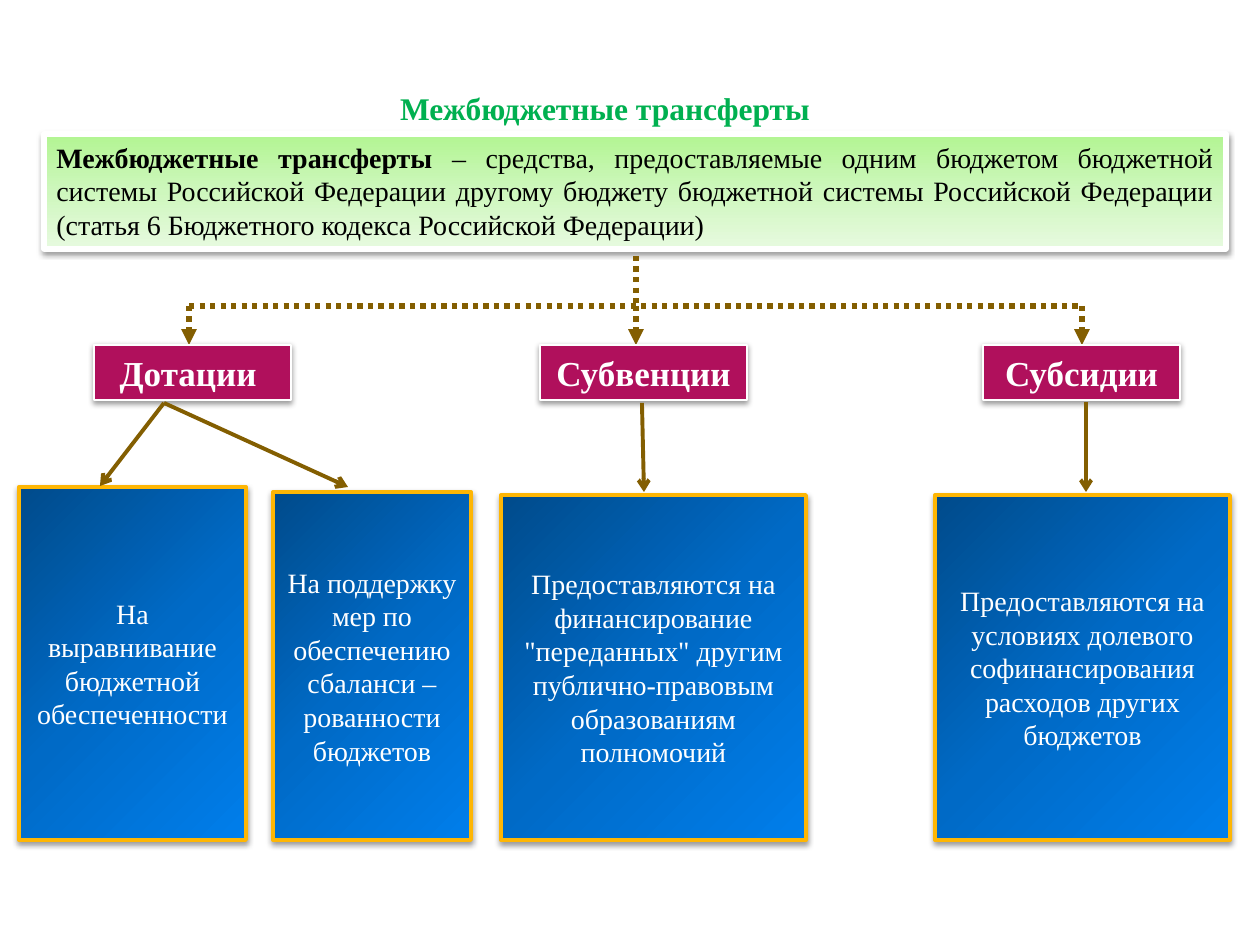
"""Builds a slide that explains the kinds of interbudgetary transfers."""
from copy import deepcopy

from lxml.etree import SubElement
from pptx import Presentation
from pptx.dml.color import RGBColor
from pptx.enum.dml import MSO_LINE
from pptx.enum.shapes import MSO_CONNECTOR, MSO_SHAPE
from pptx.enum.text import MSO_ANCHOR, PP_ALIGN
from pptx.oxml.ns import qn
from pptx.util import Emu, Pt

FONT = "Times New Roman"
BROWN = "835E01"
GREEN_STOPS = ("B2F592", "CEF7BD", "E7FADF")
BLUE_STOPS = ("004B8B", "006AC6", "007EEB")
CENTERS = (189, 636, 1082)
BUS_Y = 306
KIND_TOP = 345
BOTTOM = 840

KINDS = (
    (94, 197, "Дотации "),
    (540, 207, "Субвенции "),
    (983, 197, "Субсидии"),
)
DETAILS = (
    (19, 487, 227, "На выравнивание бюджетной обеспеченности"),
    (273, 492, 198, "На поддержку мер по обеспечению сбаланси –рованности бюджетов"),
    (501, 495, 305, 'Предоставляются на финансирование "переданных" другим '
                    "публично-правовым образованиям полномочий"),
    (935, 495, 295, "Предоставляются на условиях долевого софинансирования "
                    "расходов других бюджетов"),
)
ARROWS = (
    (164, 403, 100, 486),
    (164, 403, 348, 487),
    (642, 403, 644, 492),
    (1086, 402, 1086, 492),
)


def px(n):
    return Emu(round(n * 914400 / 126))


def rgb(value):
    return RGBColor.from_string(value)


def set_gradient(fill, parent, colors, angle):
    fill.gradient()
    fill.gradient_angle = 360 - angle
    stops = parent.find(".//" + qn("a:gsLst"))
    stops.insert(1, deepcopy(stops[0]))
    for stop, color, position in zip(fill.gradient_stops, colors, (0, 0.5, 1)):
        stop.color.rgb = rgb(color)
        stop.position = position


def add_shadow(sp):
    sp.shadow.inherit = False
    effects = sp._element.spPr.find(qn("a:effectLst"))
    shadow = SubElement(effects, qn("a:outerShdw"), blurRad="40000", dist="20000",
                        dir="5400000", rotWithShape="0")
    color = SubElement(shadow, qn("a:srgbClr"), val="000000")
    SubElement(color, qn("a:alpha"), val="38000")


def add_box(s, left, top, width, height, line, line_width):
    sp = s.shapes.add_shape(MSO_SHAPE.RECTANGLE, px(left), px(top), px(width), px(height))
    sp.line.color.rgb = rgb(line)
    sp.line.width = Pt(line_width)
    add_shadow(sp)
    return sp


def write(sp, runs, size, color, bold=False, align=PP_ALIGN.CENTER, anchor=MSO_ANCHOR.TOP):
    tf = sp.text_frame
    tf.word_wrap = True
    tf.vertical_anchor = anchor
    p = tf.paragraphs[0]
    p.alignment = align
    p.font.name = FONT
    p.font.size = Pt(size)
    p.font.color.rgb = rgb(color)
    p.font.bold = bold
    for text in runs:
        p.add_run().text = text
    return p


def add_line(s, x1, y1, x2, y2, width, arrow=None, dotted=False):
    line = s.shapes.add_connector(MSO_CONNECTOR.STRAIGHT, px(x1), px(y1), px(x2), px(y2))
    line.line.color.rgb = rgb(BROWN)
    line.line.width = Pt(width)
    if dotted:
        line.line.dash_style = MSO_LINE.ROUND_DOT
    if arrow:
        SubElement(line.line._get_or_add_ln(), qn("a:tailEnd"), type=arrow)
    SubElement(line._element.spPr, qn("a:effectLst"))


def add_title(s):
    sp = s.shapes.add_textbox(px(374), px(83), px(462), px(50))
    write(sp, ["Межбюджетные трансферты"], 18, "00B050", bold=True)


def add_definition(s):
    sp = add_box(s, 44, 134, 1182, 115, "FFFFFF", 3)
    set_gradient(sp.fill, sp._element.spPr, GREEN_STOPS, 90)
    p = write(sp, ["Межбюджетные трансферты ",
                   "– средства, предоставляемые одним бюджетом бюджетной системы "
                   "Российской Федерации другому бюджету бюджетной системы Российской "
                   "Федерации (статья 6 Бюджетного кодекса Российской Федерации)"],
              16, "000000", align=PP_ALIGN.JUSTIFY)
    p.runs[0].font.bold = True


def add_branches(s):
    left, middle, right = CENTERS
    add_line(s, left, BUS_Y, right, BUS_Y, 3, dotted=True)
    add_line(s, middle, 256, middle, BUS_Y, 3, dotted=True)
    for x in CENTERS:
        add_line(s, x, BUS_Y, x, KIND_TOP, 3, "triangle", dotted=True)


def add_kind(s, left, width, text):
    sp = add_box(s, left, KIND_TOP, width, 55, "FFFFFF", 1.5)
    sp.fill.solid()
    sp.fill.fore_color.rgb = rgb("B0105C")
    write(sp, [text], 20, "FFFFFF", bold=True)


def add_detail(s, left, top, width, text):
    sp = add_box(s, left, top, width, BOTTOM - top, "FEB604", 2.25)
    set_gradient(sp.fill, sp._element.spPr, BLUE_STOPS, 45)
    write(sp, [text], 16, "FFFFFF", anchor=MSO_ANCHOR.MIDDLE)


def main():
    prs = Presentation()
    prs.slide_width, prs.slide_height = px(1260), px(945)
    s = prs.slides.add_slide(prs.slide_layouts[6])
    add_title(s)
    add_definition(s)
    add_branches(s)
    for kind in KINDS:
        add_kind(s, *kind)
    for detail in DETAILS:
        add_detail(s, *detail)
    for arrow in ARROWS:
        add_line(s, *arrow, 2.25, "arrow")
    prs.save("out.pptx")


if __name__ == "__main__":
    main()
